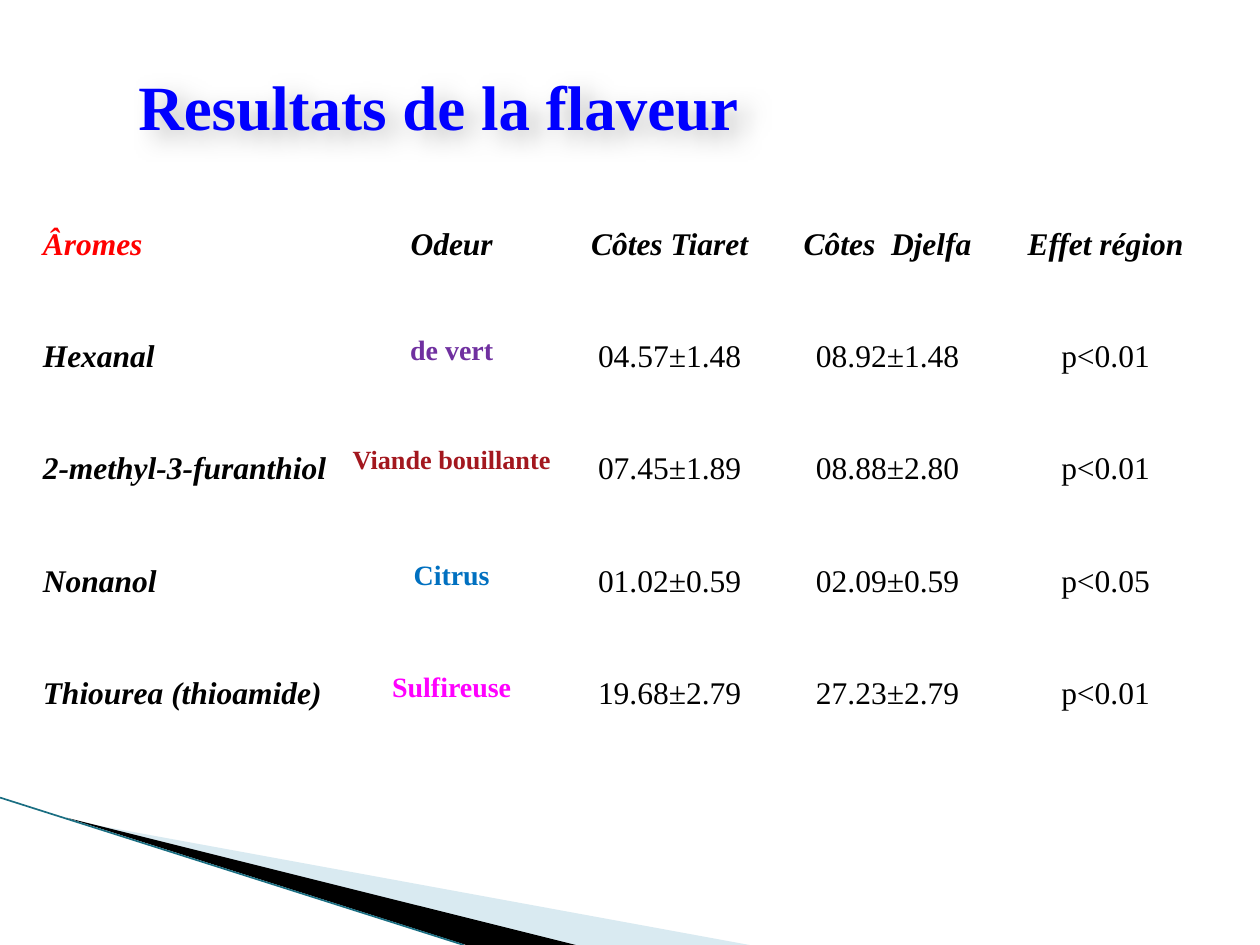
from dataclasses import dataclass

from lxml import etree
from pptx import Presentation
from pptx.dml.color import RGBColor
from pptx.enum.shapes import MSO_CONNECTOR
from pptx.enum.text import MSO_ANCHOR, PP_ALIGN
from pptx.oxml import parse_xml
from pptx.oxml.ns import nsdecls, qn
from pptx.util import Inches, Pt

LEFT, CENTER, JUSTIFY = PP_ALIGN.LEFT, PP_ALIGN.CENTER, PP_ALIGN.JUSTIFY
MIDDLE = MSO_ANCHOR.MIDDLE
STRAIGHT = MSO_CONNECTOR.STRAIGHT


@dataclass(frozen=True)
class Theme:
    font: str = "Times New Roman"
    title: str = "0000FF"
    text: str = "000000"
    head: str = "FF0000"
    pale: str = "A0CBDC"
    edge: str = "1A6E82"
    title_size: float = 36
    body_size: float = 18
    odour_size: float = 16
    small_size: float = 15


theme = Theme()


def style(p, size, color, bold=False, italic=False):
    for r in p.runs:
        font = r.font
        font.name, font.size = theme.font, Pt(size)
        font.bold, font.italic = bold, italic
        font.color.rgb = RGBColor.from_string(color)


prs = Presentation()
prs.slide_width, prs.slide_height = Inches(10), Inches(7.5)
s = prs.slides.add_slide(prs.slide_layouts[6])

# Corner wedges
wedges = [
    ([(0.55, 6.51), (5.95, 7.5), (4.56, 7.5)], theme.pale, 40),
    ([(0.53, 6.49), (4.57, 7.5), (3.7, 7.5)], theme.text, 100),
]
for points, color, opacity in wedges:
    corners = [(Inches(x), Inches(y)) for x, y in points]
    builder = s.shapes.build_freeform(*corners[0])
    builder.add_line_segments(corners[1:])
    sp = builder.convert_to_shape()
    sp.shadow.inherit = False
    sp.line.fill.background()
    sp.fill.solid()
    sp.fill.fore_color.rgb = RGBColor.from_string(color)
    if opacity < 100:
        clr = sp._element.spPr.find(".//" + qn("a:srgbClr"))
        etree.SubElement(clr, qn("a:alpha")).set("val", str(opacity * 1000))

# Wedge edge
edge = s.shapes.add_connector(STRAIGHT, Inches(0), Inches(6.33), Inches(3.68), Inches(7.5))
edge.line.color.rgb = RGBColor.from_string(theme.edge)
edge.line.width = Pt(0.95)
etree.SubElement(edge._element.spPr, qn("a:effectLst"))

# Title with a soft shadow
title = s.shapes.add_textbox(Inches(1), Inches(0.21), Inches(9), Inches(1.25))
tf = title.text_frame
tf.word_wrap = True
tf.vertical_anchor = MIDDLE
tf.text = "Resultats de la flaveur"
style(tf.paragraphs[0], theme.title_size, theme.title, bold=True)
title._element.spPr.append(parse_xml(
    f'<a:effectLst {nsdecls("a")}>'
    '<a:outerShdw blurRad="180000" dist="100000" dir="1800000" algn="tl" rotWithShape="0">'
    '<a:srgbClr val="000000"><a:alpha val="25000"/></a:srgbClr>'
    '</a:outerShdw></a:effectLst>'))

# Flavour table
headers = ["Âromes", "Odeur", "Côtes Tiaret", "Côtes  Djelfa", "Effet région"]
rows = [
    ["Hexanal", "de vert", "04.57±1.48", "08.92±1.48", "p<0.01"],
    ["2-methyl-3-furanthiol", "Viande bouillante", "07.45±1.89", "08.88±2.80", "p<0.01"],
    ["Nonanol", "Citrus", "01.02±0.59", "02.09±0.59", "p<0.05"],
    ["Thiourea (thioamide)", "Sulfireuse", "19.68±2.79", "27.23±2.79", "p<0.01"],
]
odours = [
    ("7030A0", theme.odour_size),
    ("A3171E", theme.small_size),
    ("0070C0", theme.odour_size),
    ("FF00FF", theme.odour_size),
]
table = s.shapes.add_table(len(rows) + 1, len(headers), Inches(0.28), Inches(1.53),
                           Inches(9.36), Inches(4.45)).table
table.first_row = table.horz_banding = False
for i, col in enumerate(table.columns):
    col.width = Inches(1.73 if i else 2.44)
for row in table.rows:
    row.height = Inches(0.89)

for i, values in enumerate([headers] + rows):
    for j, value in enumerate(values):
        cell = table.cell(i, j)
        cell.fill.background()
        cell.margin_left = cell.margin_right = Inches(0.06)
        cell.margin_top = cell.margin_bottom = 0
        cell.text_frame.text = value
        p = cell.text_frame.paragraphs[0]
        p.line_spacing = 2.0
        p.alignment = CENTER if j else JUSTIFY if i else LEFT
        color, size = theme.text, theme.body_size
        if i == j == 0:
            color = theme.head
        elif i and j == 1:
            color, size = odours[i - 1]
        style(p, size, color, bold=i == 0 or j < 2, italic=i == 0 or j == 0)

prs.save("out.pptx")
